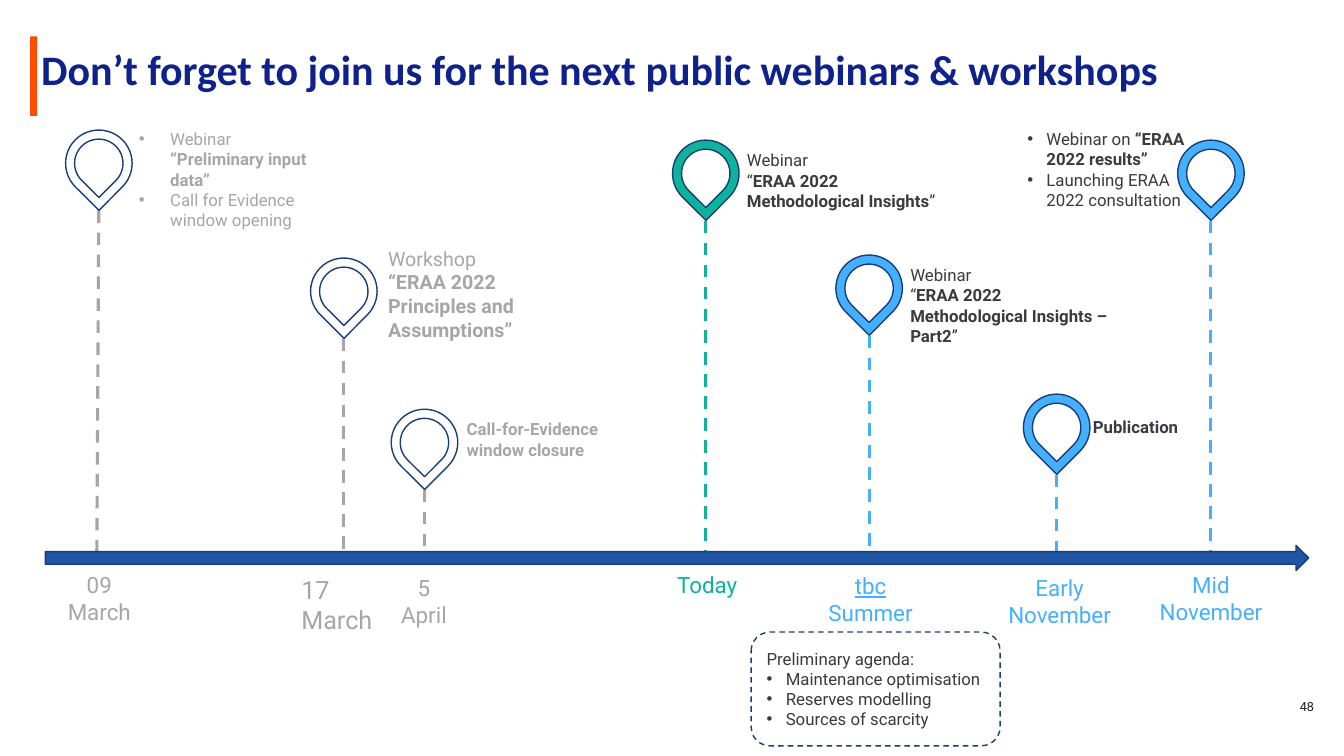
from dataclasses import dataclass

from lxml import etree
from pptx import Presentation
from pptx import util as u
from pptx.dml.color import RGBColor
from pptx.enum import dml, shapes, text
from pptx.oxml.ns import qn

WHITE, NAVY, BLUE, TITLE_BLUE = "FFFFFF", "183E7A", "2054A5", "0F218B"
ORANGE, GREY, GREEN, SKY = "FF4D00", "A6A6A6", "0FB29A", "45B0FF"
DARK, BLACK = "3A3A3F", "1D1D20"
SHAPE, ALIGN = shapes.MSO_SHAPE, text.PP_ALIGN
PIN_SIZE, PIN_RIM, PIN_DROP, AXIS_TOP = 0.66, 0.09, 0.8, 5.52


def rgb(value):
    return RGBColor.from_string(value)


@dataclass
class Milestone:
    x: float
    top: float
    foot: float
    pin_fill: str
    color: str
    callout_box: tuple
    callout: list
    date_box: tuple
    date: list
    callout_color: str = DARK
    callout_size: int = 12
    indent: float = 0
    date_size: int = 16
    date_align: ALIGN = ALIGN.CENTER


class SlideBuilder:
    font = "Roboto"

    def __init__(self, slide):
        self.slide = slide

    def shape(self, kind, box, fill=None, line=None, dashed=False, rotation=0):
        shape = self.slide.shapes.add_shape(kind, *map(u.Inches, box))
        shape.shadow.inherit = False
        shape.rotation = rotation
        if fill:
            shape.fill.solid()
            shape.fill.fore_color.rgb = rgb(fill)
        else:
            shape.fill.background()
        if line:
            shape.line.color.rgb = rgb(line)
            shape.line.width = u.Pt(1)
            if dashed:
                shape.line.dash_style = dml.MSO_LINE.DASH
        else:
            shape.line.fill.background()
        return shape

    def text_box(self, box, paragraphs, size, color, grow=True, **style):
        frame = self.slide.shapes.add_textbox(*map(u.Inches, box)).text_frame
        frame.word_wrap = True
        if grow:
            frame.auto_size = text.MSO_AUTO_SIZE.SHAPE_TO_FIT_TEXT
        self.fill_text(frame, paragraphs, size, color, **style)
        return frame

    def fill_text(self, frame, paragraphs, size, color, align=ALIGN.LEFT,
                  indent=0, font=None, spacing=None):
        """Fill a frame; ** switches bold, __ in front underlines, * in front bullets."""
        for index, content in enumerate(paragraphs):
            paragraph = frame.add_paragraph() if index else frame.paragraphs[0]
            paragraph.alignment = align
            if spacing:
                paragraph.line_spacing = u.Pt(spacing)
            if content.startswith("* "):
                content = content[2:]
                self.bullet(paragraph, indent)
            underlined = content.startswith("__")
            parts = content.removeprefix("__").split("**")
            all_bold = len(parts) == 3 and not parts[0] and not parts[2]
            paragraph.font.name = font or self.font
            paragraph.font.size = u.Pt(size)
            paragraph.font.color.rgb = rgb(color)
            if all_bold:
                paragraph.font.bold = True
            if underlined:
                paragraph.font.underline = True
            for position, part in enumerate(parts):
                for line_index, line in enumerate(part.split("\n")):
                    if line_index:
                        paragraph.add_line_break()
                    if line:
                        run = paragraph.add_run()
                        run.text = line
                        if position % 2 and not all_bold:
                            run.font.bold = True

    def bullet(self, paragraph, indent):
        properties = paragraph._p.get_or_add_pPr()
        properties.set("marL", str(u.Inches(indent)))
        properties.set("indent", str(-u.Inches(indent)))
        etree.SubElement(properties, qn("a:buFont")).set("typeface", "Arial")
        etree.SubElement(properties, qn("a:buChar")).set("char", "•")

    def dashed_line(self, start, end, color):
        line = self.slide.shapes.add_connector(
            shapes.MSO_CONNECTOR.STRAIGHT, *map(u.Inches, start + end))
        line.line.color.rgb = rgb(color)
        line.line.width = u.Pt(2.25)
        line.line.dash_style = dml.MSO_LINE.DASH
        etree.SubElement(line._element.spPr, qn("a:effectLst"))

    def pin(self, x, top, fill):
        for rim, color in ((0, fill), (PIN_RIM, WHITE)):
            size = PIN_SIZE - 2 * rim
            box = (x - size / 2, top + rim, size, size)
            self.shape(SHAPE.TEAR, box, color, NAVY, rotation=134.8)

    def milestone(self, item):
        self.dashed_line((item.x, item.top + PIN_DROP), (item.foot, AXIS_TOP), item.color)
        self.pin(item.x, item.top, item.pin_fill)
        self.text_box(item.callout_box, item.callout, item.callout_size,
                      item.callout_color, indent=item.indent)
        self.text_box(item.date_box, item.date, item.date_size, item.color,
                      align=item.date_align)


MILESTONES = [
    Milestone(0.98, 1.29, 0.96, WHITE, GREY, (1.28, 1.23, 1.99, 1.11),
              ["* Webinar **“Preliminary input data”**",
               "* Call for Evidence window opening"],
              (0.45, 5.62, 1.07, 0.64), ["09 March"], GREY, indent=0.31),
    Milestone(3.41, 2.56, 3.41, WHITE, GREY, (3.75, 2.4, 1.98, 1.04),
              ["Workshop", "**“ERAA 2022 Principles and Assumptions”**"],
              (2.89, 5.65, 1.07, 0.71), ["17 March"], GREY, 14,
              date_size=18, date_align=ALIGN.LEFT),
    Milestone(4.21, 4.06, 4.21, WHITE, GREY, (4.53, 4.11, 1.81, 0.5),
              ["**Call-for-Evidence**", "**window closure**"],
              (3.67, 5.65, 1.07, 0.64), ["5\nApril"], GREY),
    Milestone(7, 1.39, 7, GREEN, GREEN, (7.31, 1.44, 2.17, 0.71),
              ["Webinar", "“**ERAA 2022 Methodological Insights**”"],
              (6.43, 5.62, 1.17, 0.37), ["Today"]),
    Milestone(8.62, 2.53, 8.62, SKY, SKY, (8.93, 2.58, 2.17, 0.91),
              ["Webinar \n“**ERAA 2022 Methodological Insights –Part2**”"],
              (8.05, 5.63, 1.17, 0.64), ["__tbc", "Summer"]),
    Milestone(10.48, 3.91, 10.48, SKY, SKY, (10.74, 4.09, 1.99, 0.3),
              ["**Publication**"],
              (9.54, 5.65, 1.94, 0.64), ["Early", "November"]),
    Milestone(12.01, 1.39, 12.01, SKY, SKY, (10.09, 1.23, 1.78, 0.91),
              ["* Webinar on **“ERAA 2022 results”**",
               "* Launching ERAA 2022 consultation"],
              (11.35, 5.62, 1.32, 0.64), ["Mid", "November"], indent=0.19),
]
AGENDA = ["Preliminary agenda:", "* Maintenance optimisation",
          "* Reserves modelling", "* Sources of scarcity"]


def main():
    presentation = Presentation()
    presentation.slide_width = u.Inches(13.33)
    presentation.slide_height = u.Inches(7.5)
    builder = SlideBuilder(presentation.slides.add_slide(presentation.slide_layouts[6]))

    number = builder.text_box((6.75, 6.82, 6.38, 0.4), ["48"], 9, BLACK, grow=False,
                              align=ALIGN.RIGHT, spacing=9)
    number.vertical_anchor = text.MSO_ANCHOR.MIDDLE
    builder.shape(SHAPE.RECTANGLE, (0.3, 0.36, 0.07, 0.79), ORANGE)
    builder.text_box((0.31, 0.44, 12.71, 1.02),
                     ["**Don’t forget to join us for the next public webinars & workshops**"],
                     30, TITLE_BLUE, grow=False, font="Calibri", spacing=32)

    for item in MILESTONES:
        builder.milestone(item)
    builder.shape(SHAPE.RIGHT_ARROW, (0.45, 5.41, 12.53, 0.25), BLUE, NAVY)

    agenda = builder.shape(SHAPE.ROUNDED_RECTANGLE, (7.45, 6.27, 2.47, 1.13),
                           line=NAVY, dashed=True)
    agenda.text_frame.vertical_anchor = text.MSO_ANCHOR.MIDDLE
    builder.fill_text(agenda.text_frame, AGENDA, 12, DARK, indent=0.19)
    presentation.save("out.pptx")


if __name__ == "__main__":
    main()
